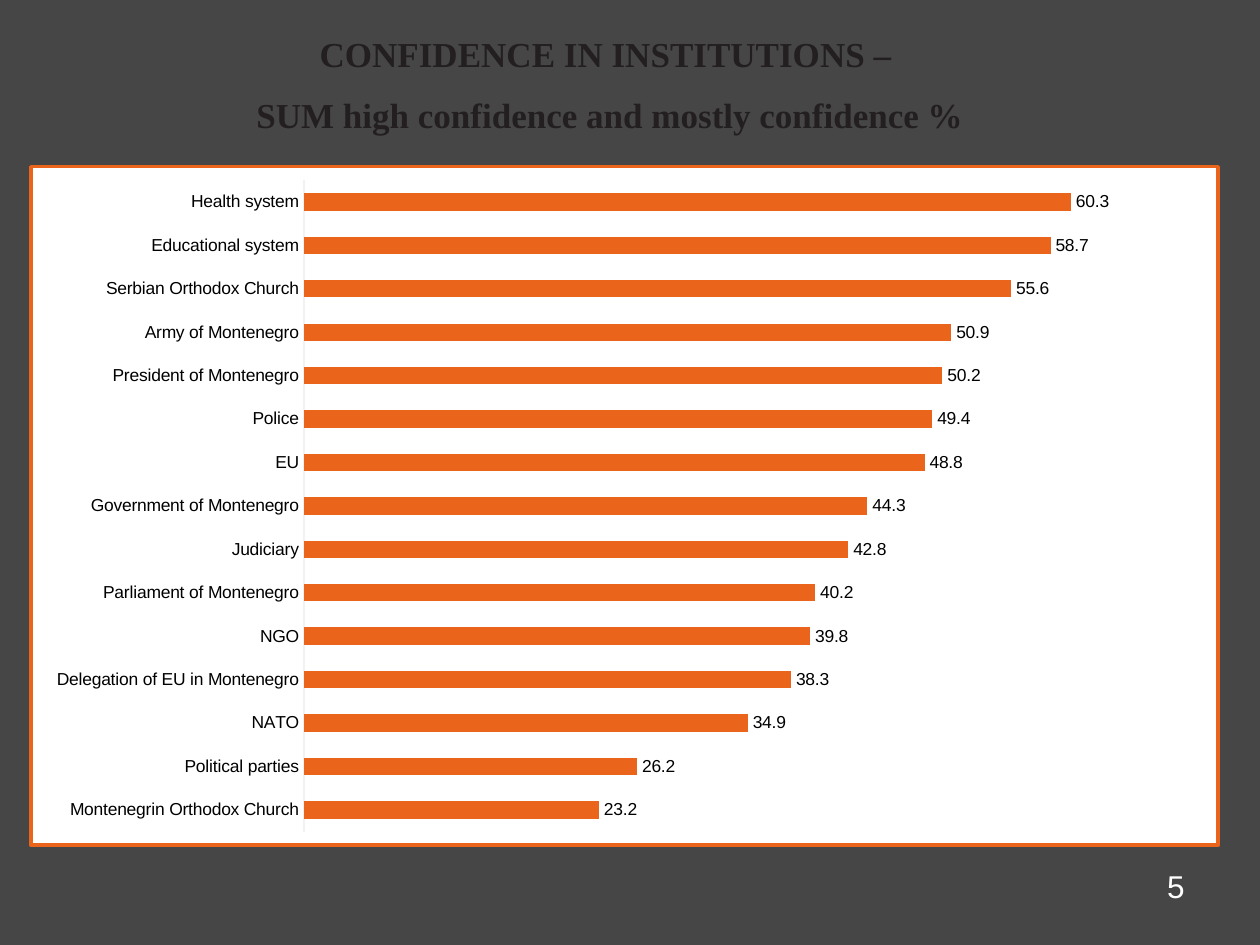
from pptx import Presentation
from pptx.chart.data import CategoryChartData
from pptx.dml.color import RGBColor
from pptx.enum.chart import XL_CHART_TYPE, XL_LABEL_POSITION, XL_TICK_MARK
from pptx.enum.text import PP_ALIGN
from pptx.oxml import parse_xml
from pptx.oxml.ns import nsdecls, qn
from pptx.util import Pt

SCALE = 914400 / 126
COLORS = {
    "background": "464646",
    "title": "231F20",
    "number": "FFFFFF",
    "orange": "EB641B",
    "panel": "FFFFFF",
    "axis": "F2F2F2",
    "label": "000000",
}
CONFIDENCE = {
    "Health system": 60.3,
    "Educational system": 58.7,
    "Serbian Orthodox Church": 55.6,
    "Army of Montenegro": 50.9,
    "President of Montenegro": 50.2,
    "Police": 49.4,
    "EU": 48.8,
    "Government of Montenegro": 44.3,
    "Judiciary": 42.8,
    "Parliament of Montenegro": 40.2,
    "NGO": 39.8,
    "Delegation of EU in Montenegro": 38.3,
    "NATO": 34.9,
    "Political parties": 26.2,
    "Montenegrin Orthodox Church": 23.2,
}
TEXTS = [
    {
        "place": (144, 26, 932, 118),
        "lines": ["CONFIDENCE IN INSTITUTIONS – ", "SUM high confidence and mostly confidence %"],
        "align": PP_ALIGN.CENTER,
        "color": "title",
        "font": {"name": "Times New Roman", "size": Pt(20), "bold": True},
    },
    {
        "place": (903, 861, 294, 66),
        "lines": ["5"],
        "align": PP_ALIGN.RIGHT,
        "color": "number",
        "font": {"name": "Arial", "size": Pt(18), "bold": False},
    },
]


def px(length):
    return round(length * SCALE)


def color(name):
    return RGBColor.from_string(COLORS[name])


deck = Presentation()
deck.slide_width, deck.slide_height = px(1260), px(945)
page = deck.slides.add_slide(deck.slide_layouts[6])
page.background.fill.solid()
page.background.fill.fore_color.rgb = color("background")

for text in TEXTS:
    box = page.shapes.add_textbox(*map(px, text["place"]))
    frame = box.text_frame
    frame.word_wrap = True
    for index, line in enumerate(text["lines"]):
        para = frame.add_paragraph() if index else frame.paragraphs[0]
        para.alignment = text["align"]
        if index:
            para.space_before = px(19)
        span = para.add_run()
        span.text = line
        for key, value in text["font"].items():
            setattr(span.font, key, value)
        span.font.color.rgb = color(text["color"])

data = CategoryChartData(number_format="###0.0")
data.categories = list(reversed(CONFIDENCE))
data.add_series("Series 1", list(reversed(CONFIDENCE.values())))
chart = page.shapes.add_chart(
    XL_CHART_TYPE.BAR_CLUSTERED, *map(px, (29, 165, 1191, 682)), data
).chart
chart.has_title = False
chart.has_legend = False
for key, value in {"name": "Arial", "size": Pt(10)}.items():
    setattr(chart.font, key, value)
chart.font.color.rgb = color("label")

categories = chart.category_axis
categories.major_tick_mark = XL_TICK_MARK.NONE
categories.has_major_gridlines = False
categories.format.line.color.rgb = color("axis")
values = chart.value_axis
for key, value in {
    "minimum_scale": 0,
    "maximum_scale": 70,
    "has_major_gridlines": False,
    "visible": False,
}.items():
    setattr(values, key, value)
values.tick_labels.number_format = "###0.0"
values.tick_labels.number_format_is_linked = False

plot = chart.plots[0]
for key, value in {
    "gap_width": 150,
    "overlap": -25,
    "vary_by_categories": False,
    "has_data_labels": True,
}.items():
    setattr(plot, key, value)
for key, value in {
    "show_value": True,
    "number_format": "###0.0",
    "number_format_is_linked": False,
    "position": XL_LABEL_POSITION.OUTSIDE_END,
}.items():
    setattr(plot.data_labels, key, value)
bars = plot.series[0].format.fill
bars.solid()
bars.fore_color.rgb = color("orange")

chart_xml = chart.element.find(qn("c:chart"))
chart_xml.addnext(parse_xml(
    f'<c:spPr {nsdecls("c", "a")}>'
    f'<a:solidFill><a:srgbClr val="{COLORS["panel"]}"/></a:solidFill>'
    f'<a:ln w="{Pt(2)}"><a:solidFill><a:srgbClr val="{COLORS["orange"]}"/></a:solidFill>'
    '<a:round/></a:ln></c:spPr>'
))
plot_area = chart_xml.find(qn("c:plotArea"))
for layout in plot_area.findall(qn("c:layout")):
    plot_area.remove(layout)
bounds = {"x": 0.23, "y": 0.02, "w": 0.75, "h": 0.96}
modes = "".join(f'<c:{key}Mode val="edge"/>' for key in "xy")
sizes = "".join(f'<c:{key} val="{value}"/>' for key, value in bounds.items())
plot_area.insert(0, parse_xml(
    f'<c:layout {nsdecls("c")}><c:manualLayout><c:layoutTarget val="inner"/>'
    f'{modes}{sizes}</c:manualLayout></c:layout>'
))

deck.save("out.pptx")
